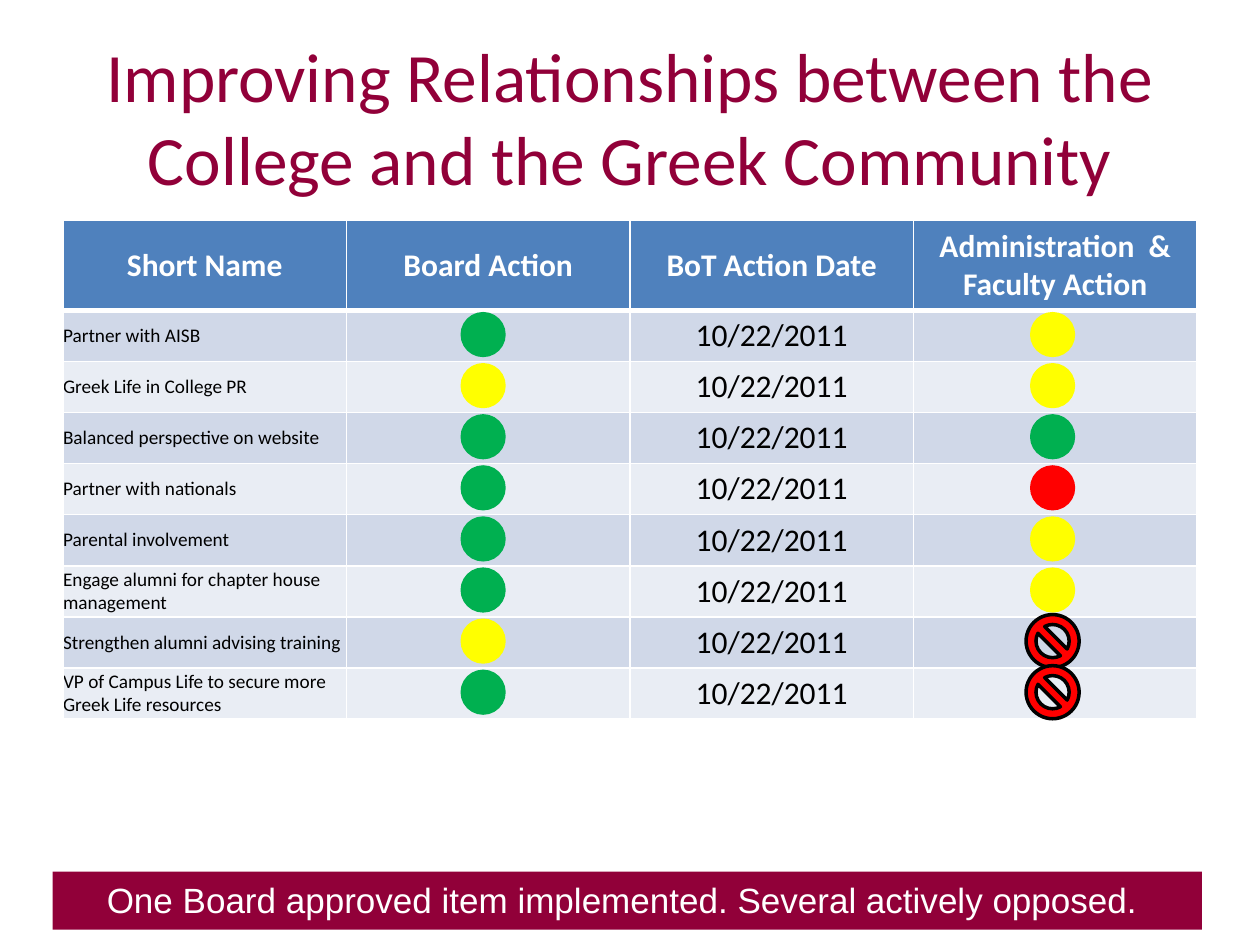
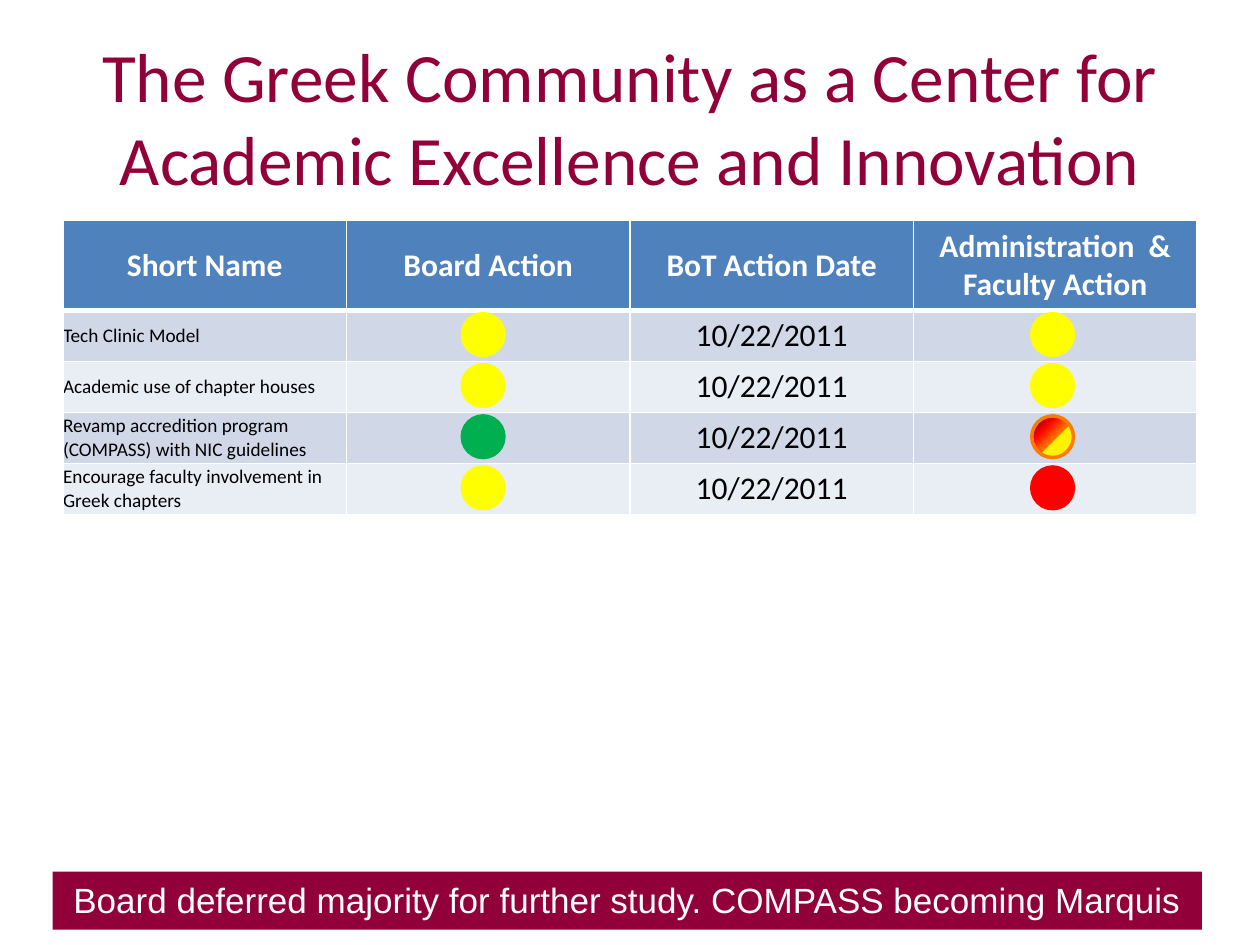
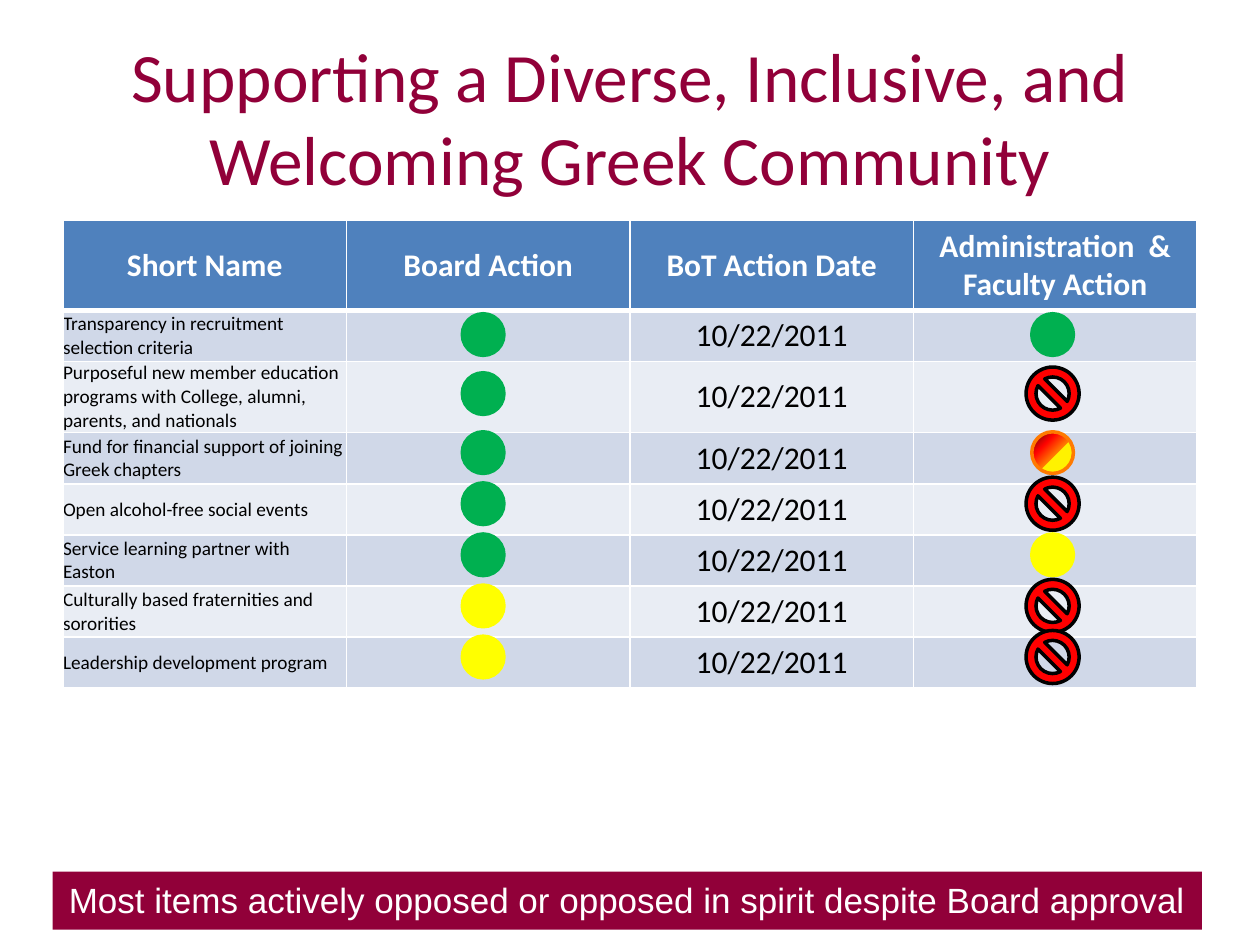
import pptx
import pptx.util
import pptx.dml.color
import pptx.enum.shapes
import pptx.enum.text
from lxml import etree
from pptx.oxml.ns import qn

Cm, Pt = pptx.util.Cm, pptx.util.Pt
RGB = pptx.dml.color.RGBColor.from_string
SHAPE = pptx.enum.shapes.MSO_SHAPE
ALIGN = pptx.enum.text.PP_ALIGN
ANCHOR = pptx.enum.text.MSO_ANCHOR

THEME = {
    "maroon": "910039", "white": "FFFFFF", "black": "000000",
    "header": "4F81BD", "bands": ("D0D8E8", "E9EDF4"),
    "title": {"name": "Calibri", "size": Pt(39.6), "bold": False},
    "head": {"name": "Calibri", "size": Pt(18), "bold": True},
    "date": {"name": "Calibri", "size": Pt(18), "bold": False},
    "item": {"name": "Calibri", "size": Pt(11), "bold": False},
    "footer": {"name": "Arial", "size": Pt(20), "bold": False},
}
RED_TO_YELLOW = [(44, "FFF200"), (45, "FF7A00"), (70, "FF0300"), (100, "4D0808")]

# status: (preset, diameter in cm, fill, line)
STATUS = {
    "green": (SHAPE.OVAL, 0.84, "00B050", "00B050"),
    "yellow": (SHAPE.OVAL, 0.84, "FFFF00", "FFFF00"),
    "red": (SHAPE.OVAL, 0.84, "FF0000", "FF0000"),
    "mixed": (SHAPE.OVAL, 0.84, RED_TO_YELLOW, "FF7A00"),
    "opposed": (SHAPE.NO_SYMBOL, 1.07, "FF0000", "000000"),
}

HEADERS = ["Short Name", "Board Action", "BoT Action Date", "Administration  & Faculty Action"]
ACTION_DATE = "10/22/2011"

# items: (short name, board status, administration and faculty status)
SLIDES = [
    {
        "title": "Improving Relationships between the College and the Greek Community",
        "items": [
            ("Partner with AISB", "green", "yellow"),
            ("Greek Life in College PR", "yellow", "yellow"),
            ("Balanced perspective on website", "green", "green"),
            ("Partner with nationals", "green", "red"),
            ("Parental involvement", "green", "yellow"),
            ("Engage alumni for chapter house management", "green", "yellow"),
            ("Strengthen alumni advising training", "yellow", "opposed"),
            ("VP of Campus Life to secure more Greek Life resources", "green", "opposed"),
        ],
        "footer": "One Board approved item implemented. Several actively opposed. ",
    },
    {
        "title": "The Greek Community as a Center for Academic Excellence and Innovation",
        "items": [
            ("Tech Clinic Model", "yellow", "yellow"),
            ("Academic use of chapter houses", "yellow", "yellow"),
            ("Revamp accredition program (COMPASS) with NIC guidelines", "green", "mixed"),
            ("Encourage faculty involvement in Greek chapters", "yellow", "red"),
        ],
        "footer": "Board deferred majority for further study. COMPASS becoming Marquis",
    },
    {
        "title": "Supporting a Diverse, Inclusive, and Welcoming Greek Community",
        "items": [
            ("Transparency in recruitment selection criteria", "green", "green"),
            ("Purposeful new member education programs with College, alumni, parents, and nationals",
             "green", "opposed"),
            ("Fund for financial support of joining Greek chapters", "green", "mixed"),
            ("Open alcohol-free social events", "green", "opposed"),
            ("Service learning partner with Easton", "green", "yellow"),
            ("Culturally based fraternities and sororities", "yellow", "opposed"),
            ("Leadership development program", "yellow", "opposed"),
        ],
        "footer": "Most items actively opposed or opposed in spirit despite Board approval",
    },
]

# Lengths in cm
TABLE_LEFT, TABLE_TOP, TABLE_WIDTH = 1.27, 4.45, 22.86
HEADER_HEIGHT, ROW_HEIGHT, TALL_ROW_HEIGHT = 1.78, 1.03, 1.35
TALL_ROW_CHARS = 60
BOARD_X, ADMIN_X = 9.74, 21.22


def assign(obj, values):
    for name, value in values.items():
        setattr(obj, name, value)


def write(tf, text, style, color, align=ALIGN.CENTER):
    p = tf.paragraphs[0]
    p.alignment = align
    r = p.add_run()
    r.text = text
    assign(r.font, THEME[style])
    r.font.color.rgb = RGB(color)


def fill_solid(obj, color):
    obj.fill.solid()
    obj.fill.fore_color.rgb = RGB(color)


def fill_gradient(sp, stops):
    sp.fill.gradient()
    sp.fill.gradient_angle = 135
    gs_lst = sp._element.spPr.find(".//" + qn("a:gsLst"))
    for gs in list(gs_lst):
        gs_lst.remove(gs)
    for percent, color in stops:
        gs = etree.SubElement(gs_lst, qn("a:gs"), pos=str(percent * 1000))
        etree.SubElement(gs, qn("a:srgbClr"), val=color)


def border(cell, top, bottom):
    """Draw white cell edges; top and bottom are widths in points."""
    tc_pr = cell._tc.get_or_add_tcPr()
    edges = [("a:lnL", 1), ("a:lnR", 1), ("a:lnT", top), ("a:lnB", bottom)]
    for i, (tag, width) in enumerate(edges):
        ln = etree.Element(qn(tag), w=str(Pt(width)))
        fill = etree.SubElement(ln, qn("a:solidFill"))
        etree.SubElement(fill, qn("a:srgbClr"), val=THEME["white"])
        tc_pr.insert(i, ln)


def add_title(s, text):
    sp = s.shapes.title
    assign(sp, {"left": Cm(1.27), "top": Cm(0.76), "width": Cm(22.86), "height": Cm(3.18)})
    assign(sp.text_frame, {"auto_size": pptx.enum.text.MSO_AUTO_SIZE.NONE,
                           "vertical_anchor": ANCHOR.MIDDLE, "word_wrap": True})
    write(sp.text_frame, text, "title", THEME["maroon"])


def add_action_table(s, items, heights):
    table = s.shapes.add_table(len(heights), len(HEADERS), Cm(TABLE_LEFT), Cm(TABLE_TOP),
                               Cm(TABLE_WIDTH), Cm(sum(heights))).table
    for row, height in zip(table.rows, heights):
        row.height = Cm(height)
    rows = [HEADERS] + [[name, "", ACTION_DATE, ""] for name, _, _ in items]
    for i, texts in enumerate(rows):
        for j, text in enumerate(texts):
            cell = table.cell(i, j)
            cell.vertical_anchor = ANCHOR.MIDDLE
            fill_solid(cell, THEME["bands"][(i - 1) % 2] if i else THEME["header"])
            border(cell, top=3 if i == 1 else 1, bottom=1 if i else 3)
            if i == 0:
                write(cell.text_frame, text, "head", THEME["white"])
            elif j == 0:
                assign(cell, dict.fromkeys(
                    ("margin_left", "margin_right", "margin_top", "margin_bottom"), 0))
                write(cell.text_frame, text, "item", THEME["black"], ALIGN.LEFT)
            elif text:
                write(cell.text_frame, text, "date", THEME["black"])


def add_status(s, status, x, y):
    """Place a status mark centred on x, y."""
    preset, size, fill, line = STATUS[status]
    sp = s.shapes.add_shape(preset, Cm(x - size / 2), Cm(y - size / 2), Cm(size), Cm(size))
    sp.shadow.inherit = False
    if isinstance(fill, list):
        fill_gradient(sp, fill)
    else:
        fill_solid(sp, fill)
    sp.line.color.rgb = RGB(line)
    sp.line.width = Pt(2)


def add_footer(s, text):
    sp = s.shapes.add_shape(SHAPE.RECTANGLE, Cm(1.06), Cm(17.57), Cm(23.17), Cm(1.17))
    sp.shadow.inherit = False
    fill_solid(sp, THEME["maroon"])
    sp.line.fill.background()
    assign(sp.text_frame, {"word_wrap": True, "vertical_anchor": ANCHOR.BOTTOM,
                           "margin_left": Cm(0.25), "margin_right": Cm(0.25),
                           "margin_top": Cm(0.13), "margin_bottom": Cm(0.18)})
    write(sp.text_frame, text, "footer", THEME["white"])


def build_slide(prs, content):
    s = prs.slides.add_slide(prs.slide_layouts[5])
    items = content["items"]
    heights = [HEADER_HEIGHT] + [
        TALL_ROW_HEIGHT if len(name) > TALL_ROW_CHARS else ROW_HEIGHT for name, _, _ in items]
    add_title(s, content["title"])
    add_action_table(s, items, heights)
    for i, (_, board, admin) in enumerate(items, start=1):
        y = TABLE_TOP + sum(heights[:i]) + heights[i] / 2
        add_status(s, board, BOARD_X, y)
        add_status(s, admin, ADMIN_X, y)
    add_footer(s, content["footer"])


def main():
    prs = pptx.Presentation()
    assign(prs, {"slide_width": Cm(25.4), "slide_height": Cm(19.05)})
    for content in SLIDES:
        build_slide(prs, content)
    prs.save("out.pptx")


if __name__ == "__main__":
    main()
